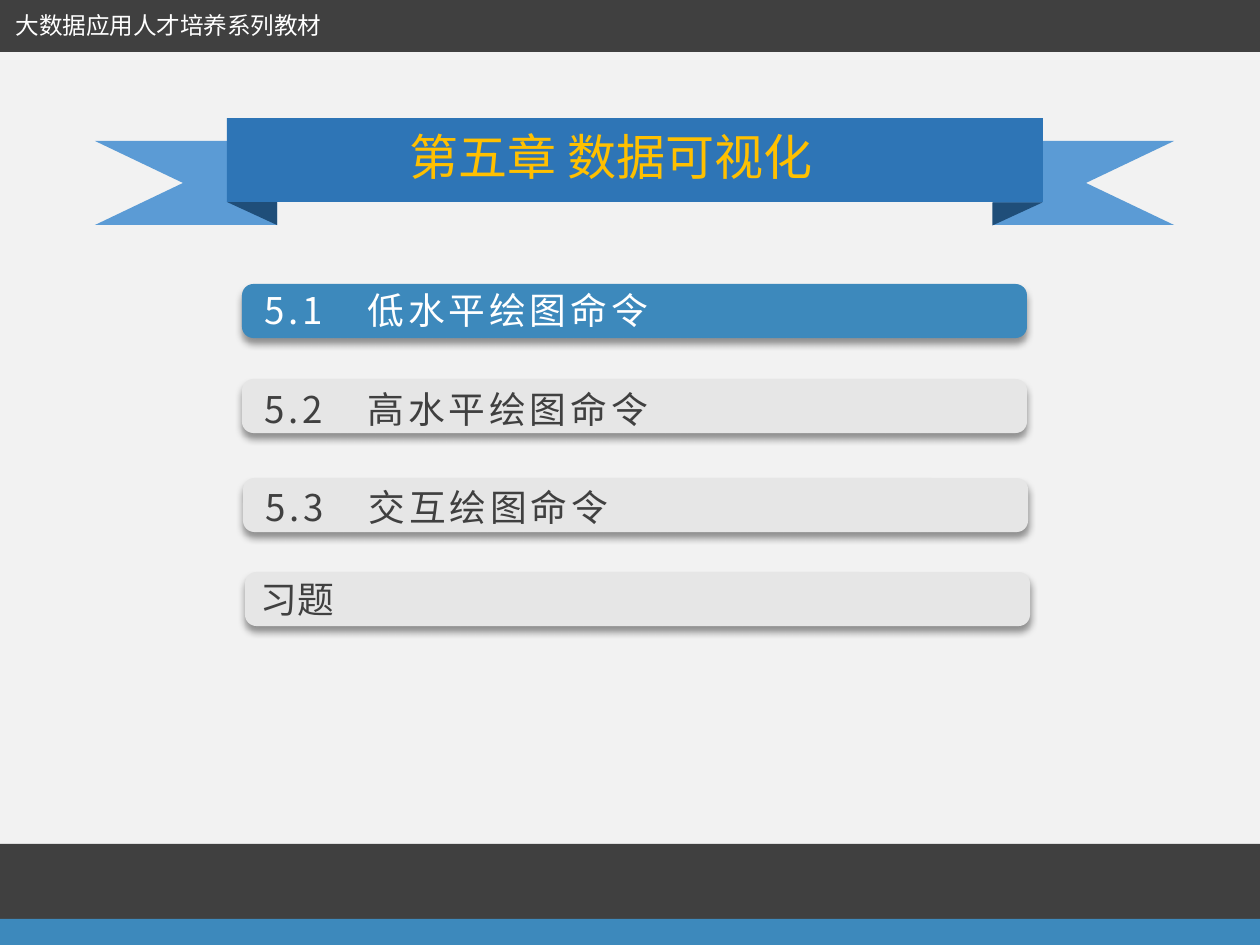
from dataclasses import dataclass

from lxml.etree import SubElement
from pptx import Presentation
from pptx.dml.color import RGBColor
from pptx.enum.shapes import MSO_SHAPE
from pptx.enum.text import MSO_ANCHOR, MSO_AUTO_SIZE, PP_ALIGN
from pptx.oxml.ns import qn
from pptx.util import Emu, Pt


@dataclass(frozen=True)
class Theme:
    font: str = "Noto Sans CJK SC"
    paper: str = "F2F2F2"
    dark: str = "404040"
    accent: str = "3D89BC"
    card: str = "E6E6E6"
    white: str = "FFFFFF"
    gold: str = "FFC000"
    band: str = "2E75B6"
    wing: str = "5B9BD5"
    fold: str = "1F4E79"
    title: float = 28
    item: float = 21
    head: float = 13.5


def px(num):
    return Emu(round(num * 914400 / 126))


class Deck:
    """Draws styled elements on the current slide."""

    def __init__(self, theme):
        self.theme = theme
        self.prs = Presentation()
        self.prs.slide_width, self.prs.slide_height = px(1260), px(945)
        self.slide = self.prs.slides.add_slide(self.prs.slide_layouts[5])
        self.shapes = self.slide.shapes
        self.paint(self.slide.background.fill, theme.paper)

    def paint(self, fill, color):
        fill.solid()
        fill.fore_color.rgb = RGBColor.from_string(color)

    def finish(self, shape, color):
        self.paint(shape.fill, color)
        shape.line.fill.background()
        shape.shadow.inherit = False
        return shape

    def block(self, box, color, kind=MSO_SHAPE.RECTANGLE, turn=0):
        shape = self.shapes.add_shape(kind, *map(px, box))
        shape.rotation = turn
        return self.finish(shape, color)

    def outline(self, points, color):
        pen = self.shapes.build_freeform(*points[0], scale=914400 / 126)
        pen.add_line_segments(points[1:])
        return self.finish(pen.convert_to_shape(), color)

    def card(self, left, top, color):
        shape = self.block((left, top, 785, 54), color, MSO_SHAPE.ROUNDED_RECTANGLE)
        shape.adjustments[0] = 0.21
        effects = shape.element.spPr.find(qn("a:effectLst"))
        shade = SubElement(effects, qn("a:outerShdw"), blurRad=str(Pt(4)),
                           dist=str(Pt(3)), dir="5400000", algn="t", rotWithShape="0")
        black = SubElement(shade, qn("a:srgbClr"), val="000000")
        SubElement(black, qn("a:alpha"), val="40000")
        return shape

    def letter(self, shape, text, size, color, align=PP_ALIGN.LEFT, gap=0):
        para = shape.text_frame.paragraphs[0]
        para.text, para.alignment = text, align
        font = para.font
        font.name, font.size = self.theme.font, Pt(size)
        font.color.rgb = RGBColor.from_string(color)
        props = para._p.pPr.find(qn("a:defRPr"))
        props.set("spc", str(round(gap * 100)))
        SubElement(props, qn("a:ea"), typeface=self.theme.font)

    def fit(self, shape):
        frame = shape.text_frame
        frame.word_wrap = False
        frame.auto_size = MSO_AUTO_SIZE.SHAPE_TO_FIT_TEXT
        frame.vertical_anchor = MSO_ANCHOR.TOP

    def label(self, box, *args, **style):
        shape = self.shapes.add_textbox(*map(px, box))
        self.fit(shape)
        self.letter(shape, *args, **style)

    def title(self, box, text, base):
        shape = self.shapes.title
        shape.left, shape.top, shape.width, shape.height = map(px, box)
        self.fit(shape)
        self.letter(shape, text, self.theme.title, self.theme.gold, PP_ALIGN.CENTER)
        base.element.addnext(shape.element)


def main():
    theme = Theme()
    deck = Deck(theme)

    for tip, notch, end in ((95, 183, 277), (1174, 1086, 993)):
        deck.outline([(tip, 141), (end, 141), (end, 225), (tip, 225), (notch, 183)],
                     theme.wing)
    deck.block((227, 202, 50, 23), theme.fold, MSO_SHAPE.RIGHT_TRIANGLE, 180)
    deck.block((1006, 189, 23, 50), theme.fold, MSO_SHAPE.RIGHT_TRIANGLE, 90)
    band = deck.block((227, 118, 816, 84), theme.band)
    deck.title((393, 120, 436, 72), "第五章 数据可视化", band)

    items = (
        (242, 284, 282, 418, "5.1　低水平绘图命令", theme.accent, theme.white),
        (242, 379, 381, 418, "5.2　高水平绘图命令", theme.card, theme.dark),
        (243, 478, 479, 378, "5.3　交互绘图命令", theme.card, theme.dark),
    )
    for left, top, line, width, text, fill, ink in items:
        deck.card(left, top, fill)
        deck.label((left + 10, line, width, 57), text, theme.item, ink, gap=2.2)
    drill = deck.card(245, 572, theme.card)
    deck.letter(drill, "习题", theme.item, theme.dark)

    deck.block((-1, -1, 1262, 53), theme.dark)
    deck.block((0, 844, 1260, 76), theme.dark)
    deck.block((0, 919, 1260, 26), theme.accent)
    deck.label((1, 5, 335, 42), "大数据应用人才培养系列教材", theme.head, theme.white,
               align=PP_ALIGN.CENTER)
    deck.prs.save("out.pptx")


if __name__ == "__main__":
    main()
